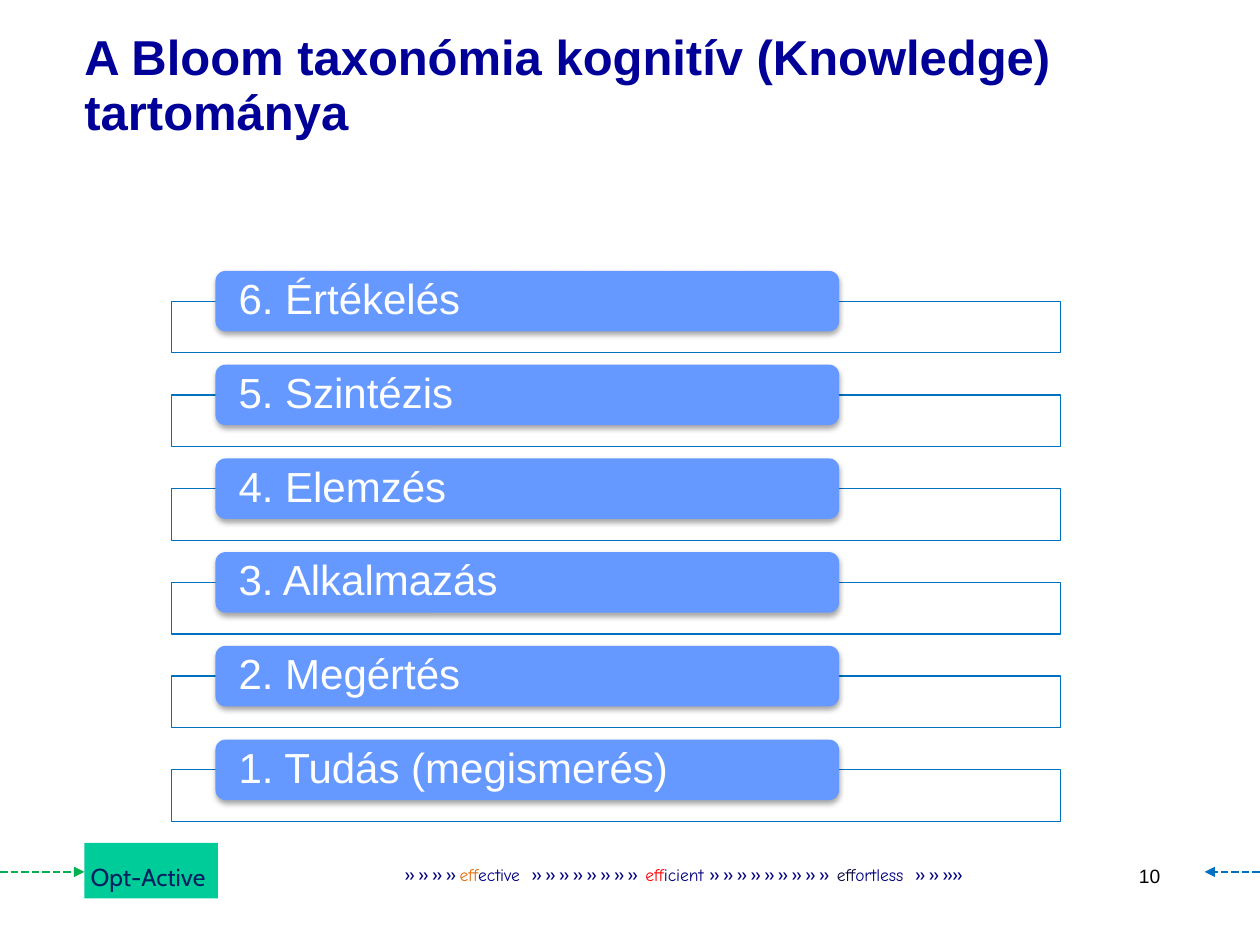
"""Build the slide on the cognitive domain of Bloom's taxonomy."""
from lxml import etree
from pptx import Presentation, util as u
from pptx.dml.color import RGBColor
from pptx.enum import dml, shapes, text
from pptx.oxml import parse_xml
from pptx.oxml.ns import nsdecls, qn

WHITE = RGBColor(0xFF, 0xFF, 0xFF)
BLACK = RGBColor(0, 0, 0)
NAVY = RGBColor(0, 0, 0x80)
TITLE = RGBColor(0, 0, 0x99)
BLUE = RGBColor(0, 0x70, 0xC0)
PILL = RGBColor(0x66, 0x99, 0xFF)
TEAL = RGBColor(0, 0xCC, 0x99)
INK = RGBColor(0, 0x20, 0x60)
GREEN = RGBColor(0, 0xB0, 0x50)
ORANGE = RGBColor(0xE3, 0x6C, 0x0A)
RED = RGBColor(0xFF, 0, 0)
DARK = RGBColor(0x03, 0, 0x36)

deck = Presentation()
deck.slide_width, deck.slide_height = u.Inches(10), u.Inches(7.5)
COL, ROW = deck.slide_width / 100, deck.slide_height / 75
slide = deck.slides.add_slide(deck.slide_layouts[5])


def area(x, y, w, h):
    return int(x * COL), int(y * ROW), int(w * COL), int(h * ROW)


def style(font, name, size, color):
    font.name, font.size, font.color.rgb = name, u.Pt(size), color


title = slide.shapes.title
title.left, title.top, title.width, title.height = area(6.7, 2.5, 86.7, 6.7)
frame = title.text_frame
frame.text = "A Bloom taxonómia kognitív (Knowledge) tartománya"
frame.word_wrap, frame.auto_size = True, text.MSO_AUTO_SIZE.NONE
frame.vertical_anchor = text.MSO_ANCHOR.TOP
frame.margin_left = frame.margin_right = frame.margin_top = frame.margin_bottom = 0
para = frame.paragraphs[0]
para.alignment, para.line_spacing = text.PP_ALIGN.LEFT, u.Pt(31)
style(para.font, "Arial", 28, TITLE)
para.font.bold = True

LEVELS = ["Tudás (megismerés)", "Megértés", "Alkalmazás", "Elemzés", "Szintézis", "Értékelés"]
PITCH = 7.44
for row, (num, level) in enumerate(reversed(list(enumerate(LEVELS, 1)))):
    top = 21.5 + row * PITCH
    bar = slide.shapes.add_shape(shapes.MSO_SHAPE.RECTANGLE, *area(13.6, top + 2.4, 70.6, 4.1))
    bar.shadow.inherit = False
    bar.fill.solid()
    bar.fill.fore_color.rgb = WHITE
    tint = bar.fill._xPr.find(qn("a:solidFill"))[0]
    etree.SubElement(tint, qn("a:alpha"), val="90000")
    bar.line.color.rgb, bar.line.width = BLUE, u.Pt(0.75)

    pill = slide.shapes.add_shape(shapes.MSO_SHAPE.ROUNDED_RECTANGLE, *area(17.1, top, 49.5, 4.8))
    pill.fill.solid()
    pill.fill.fore_color.rgb = PILL
    pill.line.fill.background()
    pill._element.spPr.append(parse_xml(
        f'<a:effectLst {nsdecls("a")}><a:outerShdw blurRad="{u.Pt(3.1)}" dist="{u.Pt(1.8)}" '
        'dir="5400000" rotWithShape="0"><a:srgbClr val="000000"><a:alpha val="35000"/>'
        '</a:srgbClr></a:outerShdw></a:effectLst>'))
    frame = pill.text_frame
    frame.text = f"{num}. {level}"
    frame.word_wrap, frame.vertical_anchor = True, text.MSO_ANCHOR.MIDDLE
    frame.margin_left = frame.margin_right = u.Inches(0.16)
    frame.margin_top = frame.margin_bottom = 0
    para = frame.paragraphs[0]
    para.alignment, para.line_spacing = text.PP_ALIGN.LEFT, 0.9
    style(para.font, "Arial", 24, WHITE)

badge = slide.shapes.add_shape(shapes.MSO_SHAPE.RECTANGLE, *area(6.7, 66.9, 10.6, 4.4))
badge.shadow.inherit = False
badge.fill.solid()
badge.fill.fore_color.rgb = TEAL
badge.line.fill.background()
frame = badge.text_frame
frame.text = "Opt-Active"
frame.word_wrap, frame.vertical_anchor = True, text.MSO_ANCHOR.TOP
frame.margin_left = 0
para = frame.paragraphs[0]
para.alignment, para.line_spacing = text.PP_ALIGN.RIGHT, u.Pt(24)
style(para.font, "Cabin", 14, INK)

for start, end, color in [(0, 6.7, GREEN), (100, 95.6, BLUE)]:
    level = int(69.2 * ROW)
    arrow = slide.shapes.add_connector(
        shapes.MSO_CONNECTOR.STRAIGHT, int(start * COL), level, int(end * COL), level)
    arrow.line.color.rgb, arrow.line.width = color, u.Pt(1.5)
    arrow.line.dash_style = dml.MSO_LINE.SQUARE_DOT
    etree.SubElement(arrow.line._get_or_add_ln(), qn("a:tailEnd"), type="triangle")
    etree.SubElement(arrow._element.spPr, qn("a:effectLst"))

motto = slide.shapes.add_textbox(*area(17.2, 68.1, 74.4, 2.7))
motto.text_frame.word_wrap = True
para = motto.text_frame.paragraphs[0]
para.alignment = text.PP_ALIGN.CENTER
for words, name, color in [
    ("» » » » ", "Cabin", NAVY),
    ("eff", "Comic Neue", ORANGE),
    ("ective  ", "Comic Neue", NAVY),
    ("» » » » » » » »  ", "Cabin", NAVY),
    ("eff", "Comic Neue", RED),
    ("icient ", "Comic Neue", NAVY),
    ("» » » » » » » » »  ", "Cabin", NAVY),
    ("eff", "Comic Neue", DARK),
    ("ortless  ", "Comic Neue", NAVY),
    ("» » »» ", "Cabin", NAVY),
]:
    run = para.add_run()
    run.text = words
    style(run.font, name, 10, color)

page = slide.shapes.add_textbox(*area(89.4, 68.1, 4.7, 2.1))
page.text_frame.word_wrap = True
page.text_frame.text = "10"
style(page.text_frame.paragraphs[0].font, "Arial", 11, BLACK)

deck.save("out.pptx")
